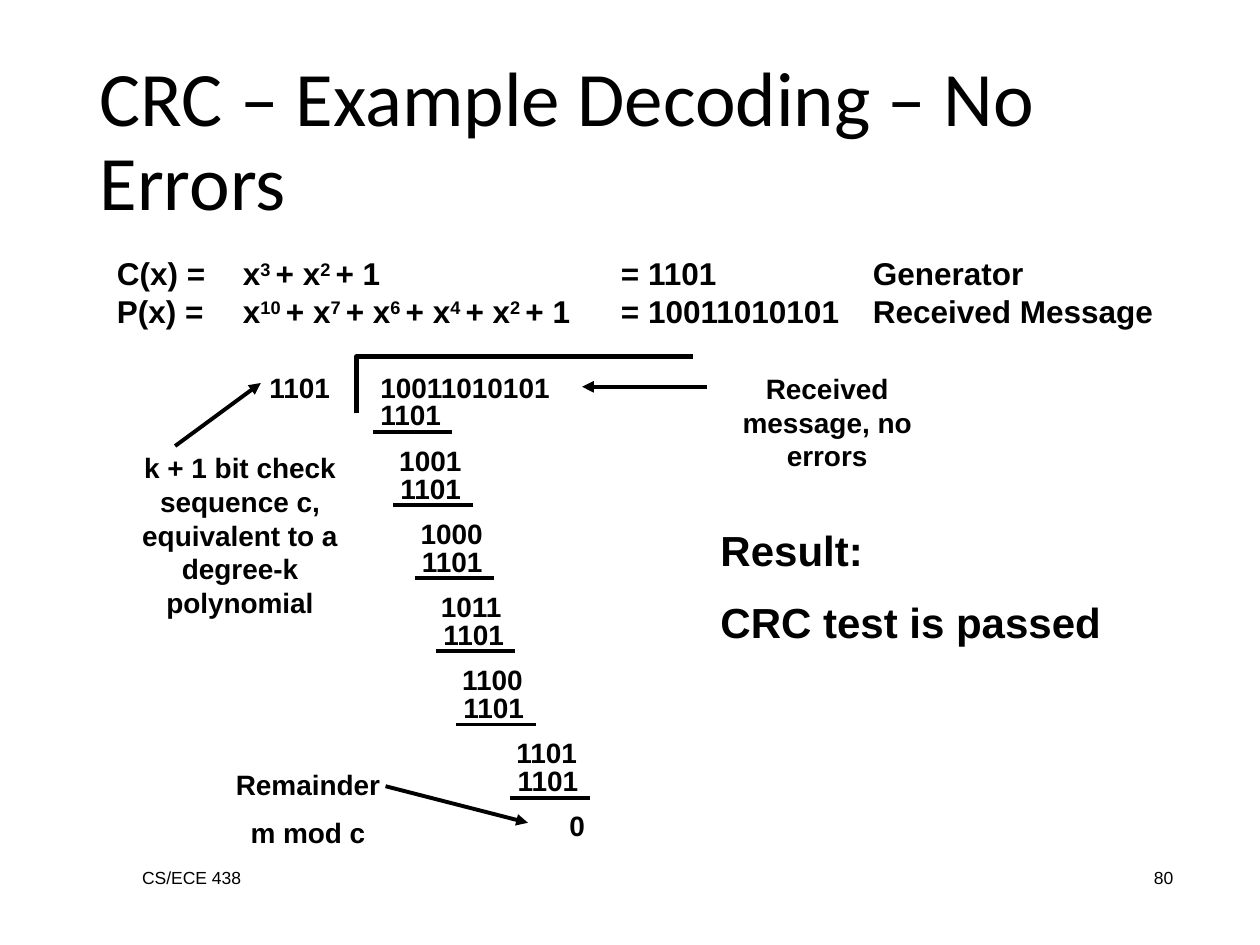
import pptx
import pptx.util
import pptx.dml.color
import pptx.enum.shapes
import pptx.enum.text
import pptx.oxml
import pptx.oxml.ns

PX = 9144  # 100 px to the inch
COLORS = {"ink": "000000", "page": "FFFFFF"}
ALIGN = pptx.enum.text.PP_ALIGN
AUTO_SIZE = pptx.enum.text.MSO_AUTO_SIZE
INK = pptx.dml.color.RGBColor.from_string(COLORS["ink"])

LABEL = {"name": "Arial", "size": 16, "bold": True}
EQUATION = {"name": "Arial", "size": 18, "bold": True}
RESULT = {"name": "Arial", "size": 24, "bold": True}
FOOTER = {"name": "Arial", "size": 10, "bold": False}
TITLE = {"name": "Calibri", "size": 44, "bold": False}

# Left of the subtracted divisor, left of what remains, and what remains
STEPS = [
    (0, 15, "1001"),
    (16, 32, "1000"),
    (33, 48, "1011"),
    (50, 65, "1100"),
    (66, 108, "1101"),
    (109, 150, "0"),
]
STEP_HEIGHT = 58
EQUATIONS = [
    "C(x) = \tx^3 ^+ x^2 ^+ 1 \t= 1101\tGenerator",
    "P(x) = \tx^10 ^+ x^7 ^+ x^6 ^+ x^4 ^+ x^2 ^+ 1 \t= 10011010101\tReceived Message",
]
EQUATION_TABS = (100, 400, 600)


def px(*lengths):
    return [pptx.util.Emu(length * PX) for length in lengths]


def set_font(font, style):
    values = {**style, "size": pptx.util.Pt(style["size"])}
    for attribute, value in values.items():
        setattr(font, attribute, value)
    font.color.rgb = INK


def add_text(slide, box, lines, style=LABEL, align=ALIGN.LEFT, wrap=True):
    """Text between two ^ marks is set as superscript."""
    area = slide.shapes.add_textbox(*px(*box))
    frame = area.text_frame
    frame.word_wrap = wrap
    frame.auto_size = AUTO_SIZE.NONE if style is FOOTER else AUTO_SIZE.SHAPE_TO_FIT_TEXT
    for index, line in enumerate(lines):
        paragraph = frame.add_paragraph() if index else frame.paragraphs[0]
        paragraph.alignment = align
        if index and style is not EQUATION:
            paragraph.space_before = pptx.util.Pt(style["size"] * 0.53)
        for part, words in enumerate(line.split("^")):
            run = paragraph.add_run()
            run.text = words
            set_font(run.font, style)
            if part % 2:
                run._r.get_or_add_rPr().set("baseline", "30000")
    return frame


def add_line(slide, start, end, arrow=False):
    line = slide.shapes.add_connector(
        pptx.enum.shapes.MSO_CONNECTOR.STRAIGHT, *px(*start, *end))
    line.line.color.rgb = INK
    line.line.width = pptx.util.Pt(2.25)
    if arrow:
        head = pptx.oxml.parse_xml(
            f'<a:tailEnd {pptx.oxml.ns.nsdecls("a")} type="triangle"/>')
        line.line._get_or_add_ln().append(head)
    properties = line._element.spPr
    properties.append(pptx.oxml.parse_xml(
        f'<a:effectLst {pptx.oxml.ns.nsdecls("a")}/>'))


def fill_title(slide, box):
    title = slide.shapes.title
    title.left, title.top, title.width, title.height = px(*box)
    frame = title.text_frame
    frame.text = "CRC – Example Decoding – No Errors"
    frame.word_wrap = True
    frame.auto_size = AUTO_SIZE.NONE
    frame.vertical_anchor = pptx.enum.text.MSO_ANCHOR.BOTTOM
    paragraph = frame.paragraphs[0]
    paragraph.alignment = ALIGN.LEFT
    paragraph.line_spacing = 0.9
    set_font(paragraph.runs[0].font, TITLE)


def add_footer(slide, box):
    left, top, width, height = box
    add_text(slide, (left, top, 208, height), ["CS/ECE 438"], FOOTER)
    add_text(slide, (left + width - 208, top, 208, height), ["80"], FOOTER, ALIGN.RIGHT)


def add_equations(slide, box):
    frame = add_text(slide, box, EQUATIONS, EQUATION, wrap=False)
    stops = "".join(f'<a:tab pos="{tab * PX}" algn="l"/>' for tab in EQUATION_TABS)
    for paragraph in frame.paragraphs:
        paragraph._p.get_or_add_pPr().append(pptx.oxml.parse_xml(
            f'<a:tabLst {pptx.oxml.ns.nsdecls("a")}>{stops}</a:tabLst>'))


def add_division(slide, box):
    left, top, width, height = box
    builder = slide.shapes.build_freeform(left, top + 45, scale=PX)
    builder.add_line_segments([(left, top), (left + width, top)], close=False)
    bracket = builder.convert_to_shape()
    bracket.fill.background()
    bracket.line.color.rgb = INK
    bracket.line.width = pptx.util.Pt(3)
    bracket.shadow.inherit = False

    digits_left = left + 9
    add_text(slide, (left - 79, top + 6, 108, 37), ["1101"])
    add_text(slide, (digits_left, top + 6, 242, 37), ["10011010101"])
    for step, (divisor_left, rest_left, rest) in enumerate(STEPS):
        x = digits_left + divisor_left
        y = top + 28 + step * STEP_HEIGHT
        add_text(slide, (x, y, 242, 37), ["1101"])
        add_line(slide, (x + 4, y + 32), (x + 67, y + 32))
        add_text(slide, (digits_left + rest_left, y + 36, 242, 37), [rest])


def add_note(slide, box, lines, arrow_start, arrow_end):
    """Centred note; the arrow ends are measured from its top left corner."""
    left, top = box[:2]
    add_text(slide, box, lines, align=ALIGN.CENTER)
    start, end = [(left + x, top + y) for x, y in (arrow_start, arrow_end)]
    add_line(slide, start, end, arrow=True)


def main():
    deck = pptx.Presentation()
    deck.slide_width, deck.slide_height = px(1000, 750)
    slide = deck.slides.add_slide(deck.slide_layouts[5])
    background = slide.background.fill
    background.solid()
    background.fore_color.rgb = pptx.dml.color.RGBColor.from_string(COLORS["page"])

    fill_title(slide, (69, 40, 862, 145))
    add_footer(slide, (103, 683, 838, 50))
    add_equations(slide, (83, 197, 842, 70))
    add_division(slide, (283, 283, 267, 390))
    add_note(slide, (92, 353, 197, 144),
             ["k + 1 bit check sequence c, equivalent to a degree-k polynomial"],
             (47, 1), (115, -49))
    add_note(slide, (146, 604, 197, 77), ["Remainder", "m mod c"], (160, 20), (273, 49))
    add_note(slide, (558, 290, 197, 90), ["Received message, no errors"], (3, 17), (-96, 17))
    add_text(slide, (562, 411, 343, 110), ["Result:", "CRC test is passed"], RESULT)
    deck.save("out.pptx")


if __name__ == "__main__":
    main()
